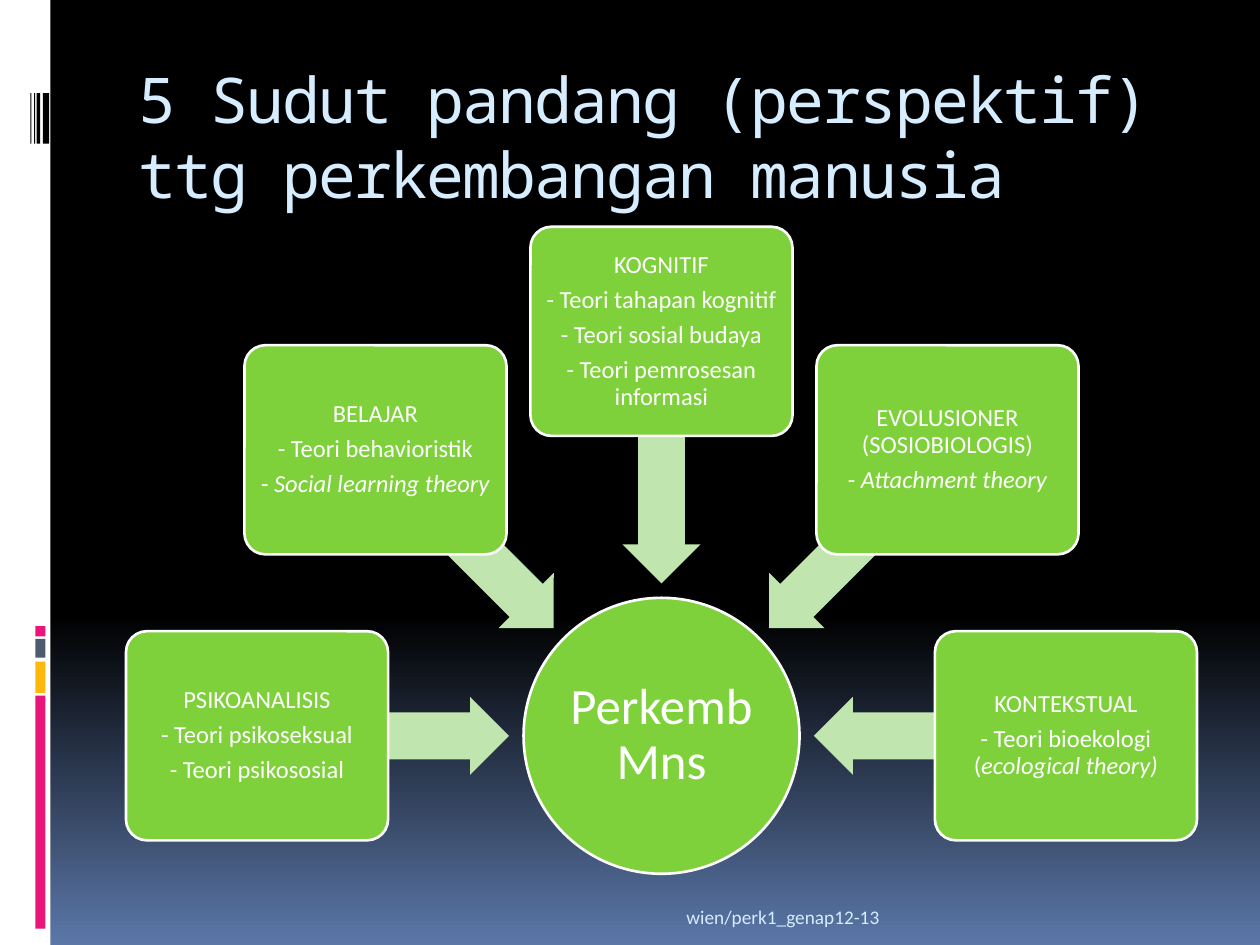
import math
import pptx
import pptx.util
import pptx.dml.color
import pptx.enum.shapes
import pptx.enum.text

Inches = pptx.util.Inches
Pt = pptx.util.Pt
SHAPE = pptx.enum.shapes.MSO_SHAPE
ALIGN = pptx.enum.text.PP_ALIGN
ANCHOR = pptx.enum.text.MSO_ANCHOR

HUB = dict(x=5.25, y=5.84, size=2.19)
CARD = dict(width=2.08, height=1.66, orbit=3.21)
ARROW = dict(width=2, height=0.62, orbit=2.21)
PERSPECTIVES = [
    [[("PSIKOANALISIS", False)],
     [("- Teori psikoseksual", False)],
     [("- Teori psikososial", False)]],
    [[("BELAJAR", False)],
     [("- Teori behavioristik", False)],
     [("-", False), (" Social learning theory", True)]],
    [[("KOGNITIF", False)],
     [("- Teori tahapan kognitif", False)],
     [("- Teori sosial budaya", False)],
     [("- Teori pemrosesan informasi", False)]],
    [[("EVOLUSIONER (SOSIOBIOLOGIS)", False)],
     [("- ", False), ("Attachment theory", True)]],
    [[("KONTEKSTUAL", False)],
     [("- Teori bioekologi (", False), ("ecological theory)", True)]],
]


def color(value):
    return pptx.dml.color.RGBColor.from_string(value)


def apply(target, values):
    for name, value in values.items():
        setattr(target, name, value)


def add_shape(page, kind, box, fill, line=None):
    shape = page.shapes.add_shape(kind, *map(Inches, box))
    shape.shadow.inherit = False
    shape.fill.solid()
    shape.fill.fore_color.rgb = color(fill)
    if line:
        shape.line.color.rgb = color(line)
        shape.line.width = Pt(1.5)
    else:
        shape.line.fill.background()
    return shape


def write(shape, paragraphs, frame_format, para_format, font_format, font_color):
    frame = shape.text_frame
    apply(frame, dict(word_wrap=True, **frame_format))
    for index, spans in enumerate(paragraphs):
        para = frame.paragraphs[0] if index == 0 else frame.add_paragraph()
        apply(para, para_format)
        for text, italic in spans:
            span = para.add_run()
            span.text = text
            apply(span.font, dict(font_format, italic=italic))
            span.font.color.rgb = color(font_color)


def write_centered(shape, paragraphs, size, inset):
    sides = ("margin_left", "margin_top", "margin_right", "margin_bottom")
    frame_format = dict.fromkeys(sides, Inches(inset))
    frame_format["vertical_anchor"] = ANCHOR.MIDDLE
    para_format = dict(alignment=ALIGN.CENTER, line_spacing=0.9, space_after=Pt(size * 0.35))
    write(shape, paragraphs, frame_format, para_format,
          dict(name="Calibri", size=Pt(size)), "FFFFFF")


def paint_background(page):
    fill = page.background.fill
    fill.gradient()
    fill.gradient_angle = 270
    for stop, (position, value) in zip(fill.gradient_stops, [(0.65, "000000"), (1, "5B77A8")]):
        stop.position = position
        stop.color.rgb = color(value)


def add_sidebar(page, box):
    left, top, width, height = box
    add_shape(page, SHAPE.RECTANGLE, box, "FFFFFF")
    for offset, tall, fill in [(5.52, 1.85, "EA157A"), (5.25, 0.25, "FEB80A"),
                               (5.07, 0.15, "4E5B6F"), (4.97, 0.08, "EA157A")]:
        add_shape(page, SHAPE.RECTANGLE, (left + 0.28, top + offset, 0.08, tall), fill)
    for offset, wide in [(0.34, 0.05), (0.29, 0.03), (0.27, 0.01), (0.24, 0.01)]:
        add_shape(page, SHAPE.RECTANGLE, (left + offset, top + 0.74, wide, 0.4), "000000")


def add_title(page, box):
    title = page.shapes.add_textbox(*map(Inches, box))
    write(title, [[("5 Sudut pandang (perspektif) ttg perkembangan manusia", False)]],
          dict(margin_top=Inches(0.12), vertical_anchor=ANCHOR.TOP),
          dict(line_spacing=Pt(43)),
          dict(name="Noto Sans Mono", size=Pt(36)), "D6ECFF")
    for span in title.text_frame.paragraphs[0].runs:
        span.font._element.set("spc", "-100")


def orbit_box(part, angle):
    x = HUB["x"] + part["orbit"] * math.cos(math.radians(angle))
    y = HUB["y"] + part["orbit"] * math.sin(math.radians(angle))
    return x - part["width"] / 2, y - part["height"] / 2, part["width"], part["height"]


def add_hub(page, box):
    hub = add_shape(page, SHAPE.OVAL, box, "7FD13B", "FFFFFF")
    write_centered(hub, [[("Perkemb Mns", False)]], 29, 0.02)


def add_arrow(page, box, angle):
    arrow = add_shape(page, SHAPE.LEFT_ARROW, box, "C0E5AF")
    arrow.adjustments[0] = 0.6
    arrow.adjustments[1] = 0.5
    arrow.rotation = angle


def add_card(page, box, paragraphs):
    card = add_shape(page, SHAPE.ROUNDED_RECTANGLE, box, "7FD13B", "FFFFFF")
    card.adjustments[0] = 0.1
    write_centered(card, paragraphs, 14, 0.03)


def add_diagram(page):
    size = HUB["size"]
    add_hub(page, (HUB["x"] - size / 2, HUB["y"] - size / 2, size, size))
    for index, paragraphs in enumerate(PERSPECTIVES):
        angle = (180 + 45 * index) % 360
        add_arrow(page, orbit_box(ARROW, angle), angle)
        add_card(page, orbit_box(CARD, angle), paragraphs)


def add_footer(page, box):
    footer = page.shapes.add_textbox(*map(Inches, box))
    write(footer, [[("wien/perk1_genap12-13", False)]],
          dict(vertical_anchor=ANCHOR.BOTTOM), dict(alignment=ALIGN.RIGHT),
          dict(name="Calibri", size=Pt(11)), "D6ECFF")


def main():
    deck = pptx.Presentation()
    apply(deck, dict(slide_width=Inches(10), slide_height=Inches(7.5)))
    page = deck.slides.add_slide(deck.slide_layouts[6])
    paint_background(page)
    add_sidebar(page, (0, 0, 0.4, 7.5))
    add_title(page, (1, 0.36, 8.5, 1))
    add_diagram(page)
    add_footer(page, (1, 7.02, 6.08, 0.4))
    deck.save("out.pptx")


if __name__ == "__main__":
    main()
